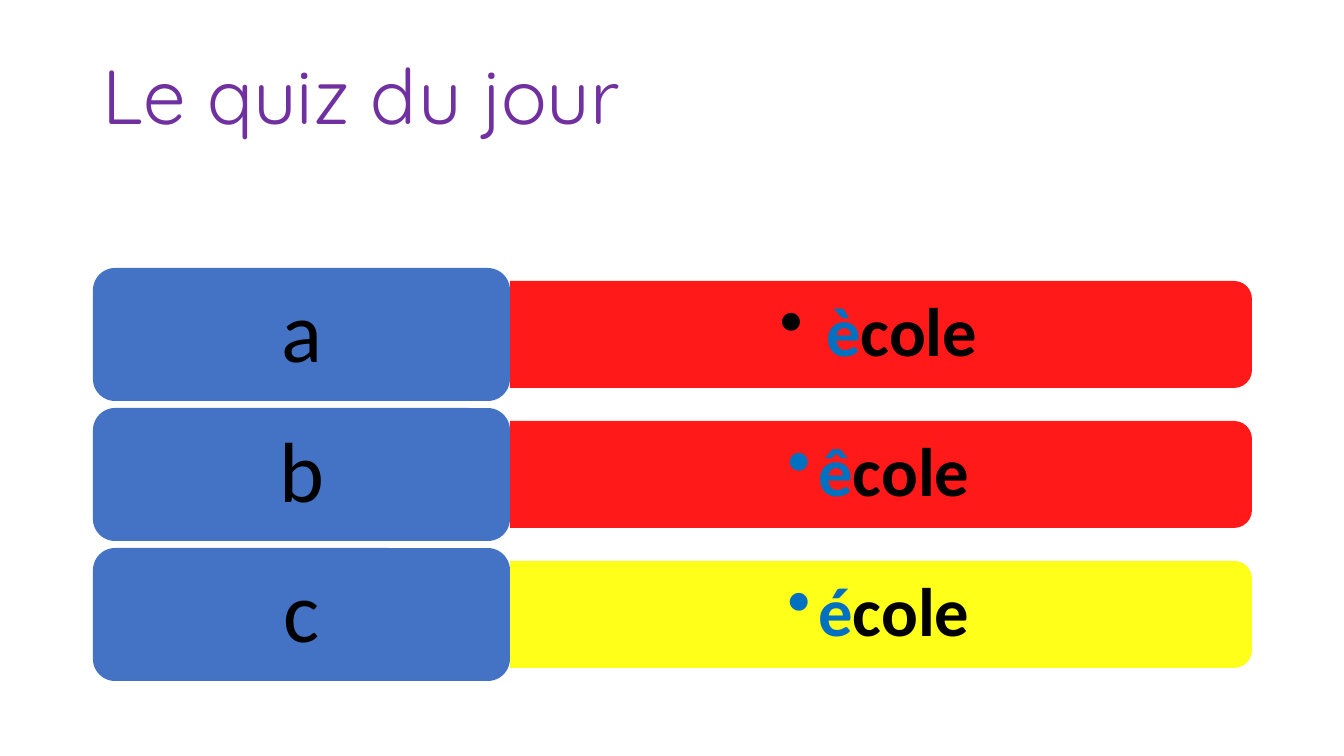
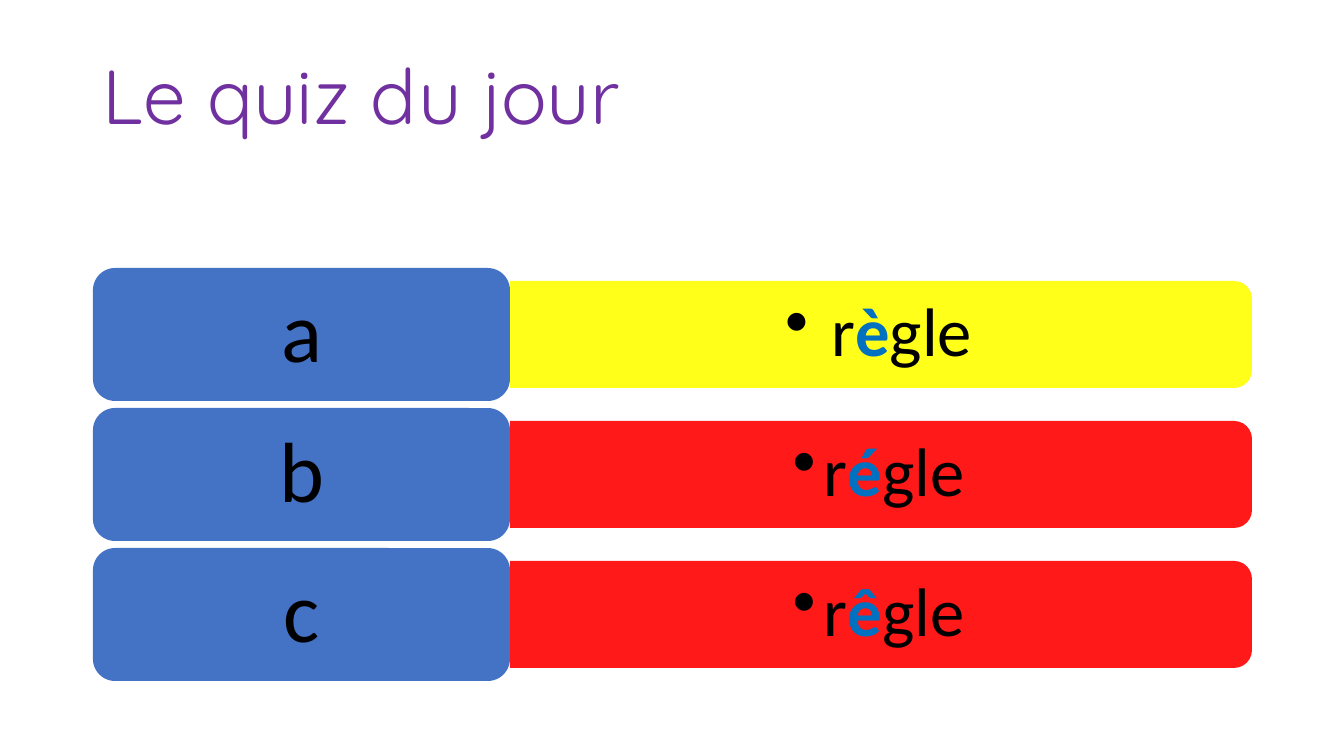
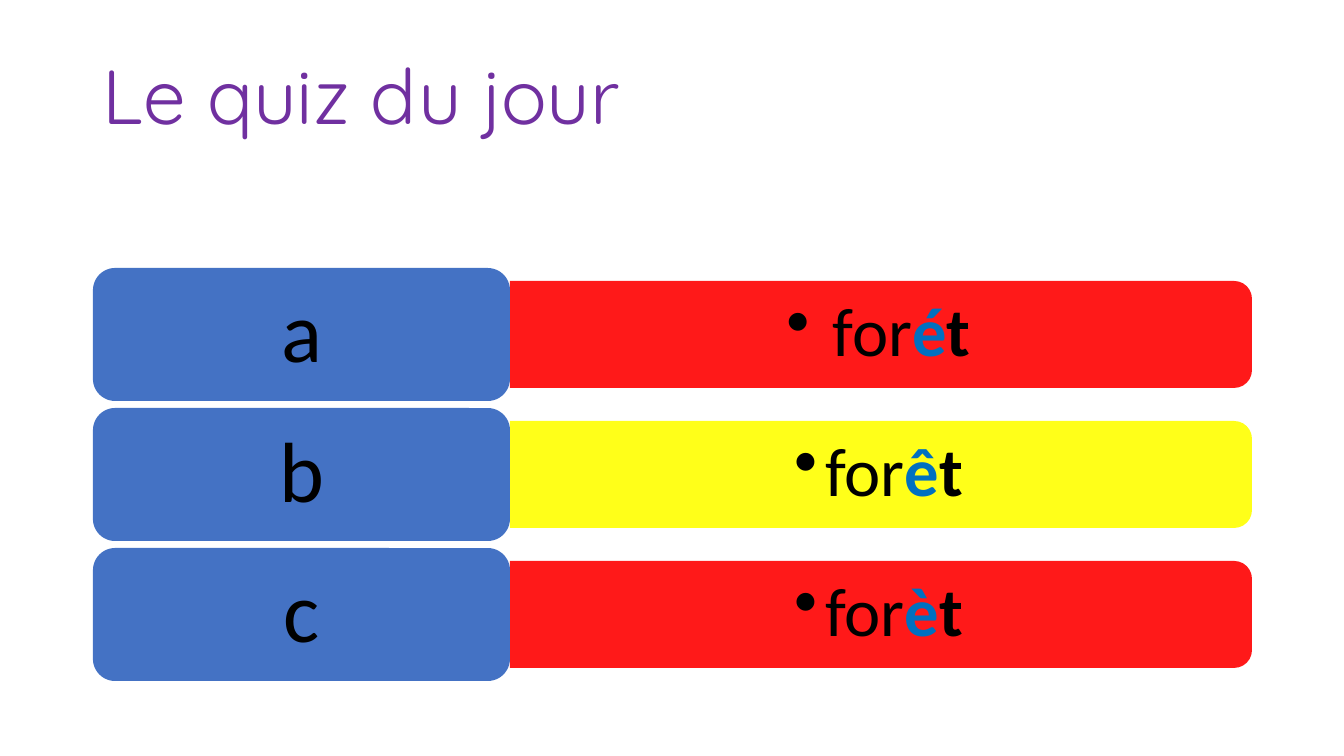
import lxml.etree
import pptx
import pptx.dml.color
import pptx.enum.shapes
import pptx.enum.text
import pptx.oxml.ns
import pptx.util

SHAPE = pptx.enum.shapes.MSO_SHAPE
ALIGN = pptx.enum.text.PP_ALIGN
MIDDLE = pptx.enum.text.MSO_ANCHOR.MIDDLE

PAGE_WIDTH, PAGE_HEIGHT = 1344, 756
EMU_PER_PX = 12192000 / PAGE_WIDTH

PURPLE, BLUE, ACCENT_BLUE = "7030A0", "4472C4", "0070C0"
WRONG, RIGHT, BLACK = "FF0000", "FFFF00", "000000"

TITLE_BOX = (93, 27, 1159, 146)
QUIZ_BOX = (93, 268, 1159, 413)
LABELS = "abc"
LABEL_WIDTH, ROW_HEIGHT, ANSWER_HEIGHT = 417, 133, 107

# Each question: head, accented letters, tail, tail in bold, index of the right answer
QUESTIONS = [
    ("", "èêé", "cole", True, 2),
    ("r", "èéê", "gle", False, 0),
    ("for", "éêè", "t", True, 1),
]


def px(length):
    return pptx.util.Emu(round(length * EMU_PER_PX))


def color(hex_text):
    return pptx.dml.color.RGBColor.from_string(hex_text)


def add_child(parent, tag, **attributes):
    return lxml.etree.SubElement(parent, pptx.oxml.ns.qn(tag), attributes)


def add_box(page, kind, box, fill, opacity=100):
    shape = page.shapes.add_shape(kind, *map(px, box))
    shape.shadow.inherit = False
    shape.line.fill.background()
    shape.fill.solid()
    shape.fill.fore_color.rgb = color(fill)
    if opacity < 100:
        fill_color = shape.fill._xPr.find(".//" + pptx.oxml.ns.qn("a:srgbClr"))
        add_child(fill_color, "a:alpha", val=str(opacity * 1000))
    return shape


def write(shape, spans, size, font="Calibri", align=ALIGN.CENTER, bullet=False):
    """Fill a shape with one paragraph; spans are (text, colour, bold)."""
    frame = shape.text_frame
    frame.word_wrap = True
    frame.vertical_anchor = MIDDLE
    para = frame.paragraphs[0]
    para.alignment = align
    para.line_spacing = 0.9
    if bullet:
        para.level = 1
        properties = para._p.get_or_add_pPr()
        properties.set("marL", str(px(31)))
        properties.set("indent", str(px(-31)))
        add_child(properties, "a:buChar", char="•")
    for text, hex_text, bold in spans:
        span = para.add_run()
        span.text = text
        span.font.name = font
        span.font.size = pptx.util.Pt(size)
        span.font.bold = bold
        span.font.color.rgb = color(hex_text)


def add_title(page, box, text):
    title = page.shapes.add_textbox(*map(px, box))
    write(title, [(text, PURPLE, False)], 54.7, font="Quicksand", align=ALIGN.LEFT)


def add_answer(page, box, spans, fill):
    """Bar rounded on its right side, with a bulleted word over it."""
    left, top, width, height = box
    shift = (width - height) / 2
    upright = (left + shift, top - shift, height, width)
    bar = add_box(page, SHAPE.ROUND_2_SAME_RECTANGLE, upright, fill, opacity=90)
    bar.rotation = 90
    word = page.shapes.add_textbox(*map(px, (left, top + 5, width - 5, height - 10)))
    frame = word.text_frame
    frame.margin_left = frame.margin_right = px(20)
    frame.margin_top = frame.margin_bottom = px(10)
    write(word, spans, 49, bullet=True)


def add_quiz(page, box, question):
    left, top, width, height = box
    head, accents, tail, tail_bold, right_index = question
    pitch = (height - ROW_HEIGHT) / (len(LABELS) - 1)
    inset = (ROW_HEIGHT - ANSWER_HEIGHT) / 2
    for index, (letter, accent) in enumerate(zip(LABELS, accents)):
        row_top = top + index * pitch
        spans = [(" ", BLACK, True)] if index == 0 else []
        if head:
            spans.append((head, BLACK, False))
        spans += [(accent, ACCENT_BLUE, True), (tail, BLACK, tail_bold)]
        answer_box = (left + LABEL_WIDTH, row_top + inset,
                      width - LABEL_WIDTH, ANSWER_HEIGHT)
        add_answer(page, answer_box, spans, RIGHT if index == right_index else WRONG)
        label = add_box(page, SHAPE.ROUNDED_RECTANGLE,
                        (left, row_top, LABEL_WIDTH, ROW_HEIGHT), BLUE)
        write(label, [(letter, BLACK, False)], 61)


def main():
    deck = pptx.Presentation()
    deck.slide_width, deck.slide_height = px(PAGE_WIDTH), px(PAGE_HEIGHT)
    for question in QUESTIONS:
        page = deck.slides.add_slide(deck.slide_layouts[6])
        add_title(page, TITLE_BOX, "Le quiz du jour")
        add_quiz(page, QUIZ_BOX, question)
    deck.save("out.pptx")


if __name__ == "__main__":
    main()
